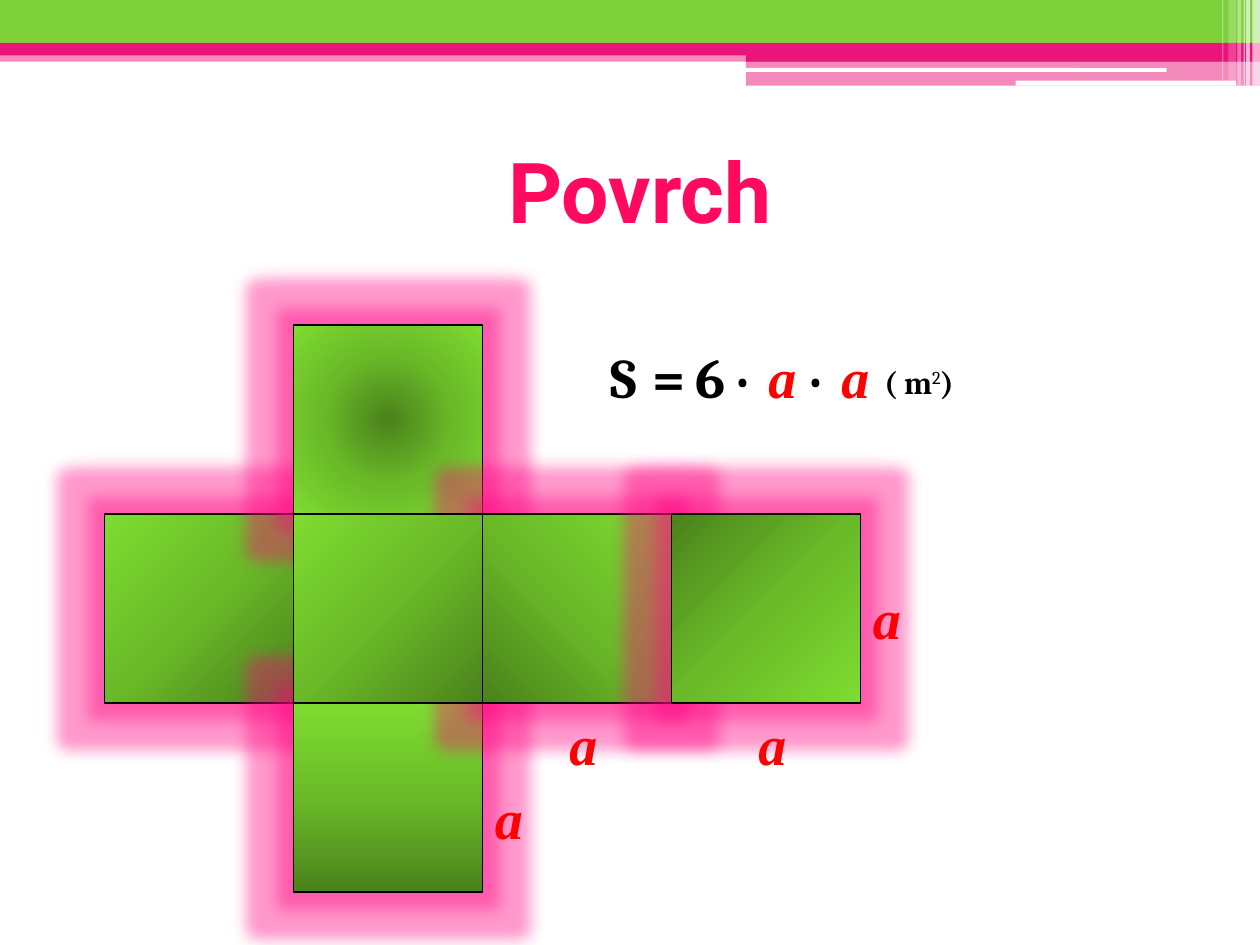
from typing import NamedTuple, Optional

from lxml import etree
from pptx import Presentation
from pptx.dml.color import RGBColor
from pptx.enum.shapes import MSO_SHAPE
from pptx.enum.text import MSO_ANCHOR, MSO_AUTO_SIZE, PP_ALIGN
from pptx.oxml import parse_xml
from pptx.oxml.ns import qn
from pptx.util import Inches, Pt

RECT = MSO_SHAPE.RECTANGLE
ROUND = MSO_SHAPE.ROUNDED_RECTANGLE
MIDDLE = MSO_ANCHOR.MIDDLE
CENTER = PP_ALIGN.CENTER
GROW = MSO_AUTO_SIZE.SHAPE_TO_FIT_TEXT
NS = 'xmlns:a="http://schemas.openxmlformats.org/drawingml/2006/main"'

GREEN, PINK, WHITE, BLACK, RED = "7FD13B", "EA157A", "FFFFFF", "000000", "FF0000"
GLOW, GLOW_RADIUS = "FF0080", Inches(0.25)
FACE_STOPS = [(0, "4B821C"), (50, "6ABA28"), (100, "7EDC30")]
TITLE_STOPS = [(0, "FF89AA"), (75, "FF0A5E"), (100, "BD0059")]
NET_LEFT, NET_TOP, SIDE = 0.83, 2.58, 1.5


class Bar(NamedTuple):
    x: float
    y: float
    w: float
    h: float
    color: str
    alpha: int = 100
    kind: int = RECT


class Face(NamedTuple):
    col: int
    row: int
    angle: Optional[int] = None
    focus: Optional[tuple] = None
    glow: bool = True


class Label(NamedTuple):
    x: float
    y: float
    w: float
    text: str


BARS = [
    Bar(0, 0.4, 10, 0.09, PINK, 50),
    Bar(0, 0, 10, 0.34, GREEN),
    Bar(0, 0.34, 10, 0.1, PINK),
    Bar(5.92, 0.39, 4.08, 0.1, PINK),
    Bar(5.92, 0.48, 4.08, 0.2, PINK, 50),
    Bar(5.91, 0.54, 3.35, 0.03, WHITE, kind=ROUND),
    Bar(8.06, 0.64, 1.75, 0.04, WHITE, kind=ROUND),
    Bar(9.94, 0, 0.06, 0.68, WHITE, 65),
    Bar(9.89, 0, 0.03, 0.68, WHITE, 65),
    Bar(9.87, 0, 0.01, 0.68, WHITE, 60),
    Bar(9.82, 0, 0.03, 0.68, WHITE, 40),
    Bar(9.75, 0, 0.06, 0.64, WHITE, 20),
    Bar(9.7, 0, 0.01, 0.64, WHITE, 30),
]

FACES = [
    Face(0, 1, angle=225),
    Face(1, 0, focus=(50, 50, 50, 50)),
    Face(1, 2, angle=270),
    Face(2, 1, focus=(0, 100, 100, 0)),
    Face(3, 1, focus=(0, 0, 100, 100)),
    Face(1, 1, angle=225, glow=False),
]

EDGE_LABELS = [
    Label(3.83, 6.17, 0.42, "a"),
    Label(4.42, 5.58, 0.42, "a"),
    Label(5.92, 5.58, 0.42, "a"),
    Label(6.83, 4.58, 0.42, "a"),
]

FORMULA = [
    Label(4.75, 2.67, 0.5, "S"),
    Label(5.08, 2.67, 0.46, "="),
    Label(5.42, 2.67, 0.45, "6"),
    Label(5.75, 2.58, 0.32, "."),
    Label(6, 2.67, 0.36, "a"),
    Label(6.33, 2.58, 0.32, "."),
    Label(6.58, 2.67, 0.36, "a"),
]

VARIABLE = {"size": Pt(32), "name": "Times New Roman", "bold": True, "italic": True}
SYMBOL = {"size": Pt(32), "name": "Cambria", "bold": True}
UNIT = {"size": Pt(18), "name": "Cambria", "bold": True}
TITLE = {"size": Pt(48), "name": "Roboto", "bold": True}


def rgb(color: str) -> RGBColor:
    return RGBColor.from_string(color)


def gradient(stops, angle=None, focus=None):
    gs = "".join(
        f'<a:gs pos="{pos * 1000}"><a:srgbClr val="{color}"/></a:gs>'
        for pos, color in stops
    )
    if focus:
        sides = " ".join(f'{k}="{v * 1000}"' for k, v in zip("ltrb", focus))
        direction = f'<a:path path="circle"><a:fillToRect {sides}/></a:path>'
    else:
        direction = f'<a:lin ang="{angle * 60000}" scaled="0"/>'
    return parse_xml(
        f'<a:gradFill {NS} rotWithShape="1"><a:gsLst>{gs}</a:gsLst>{direction}</a:gradFill>'
    )


def add_bar(s, bar: Bar) -> None:
    sp = s.shapes.add_shape(bar.kind, *map(Inches, bar[:4]))
    sp.shadow.inherit = False
    sp.line.fill.background()
    sp.fill.solid()
    sp.fill.fore_color.rgb = rgb(bar.color)
    if bar.alpha < 100:
        clr = sp.fill._xPr.find(qn("a:solidFill"))[0]
        etree.SubElement(clr, qn("a:alpha"), val=str(bar.alpha * 1000))


def add_face(s, face: Face) -> None:
    x, y = NET_LEFT + face.col * SIDE, NET_TOP + face.row * SIDE
    sp = s.shapes.add_shape(RECT, *map(Inches, (x, y, SIDE, SIDE)))
    sp.shadow.inherit = False
    sp.line.color.rgb = rgb(BLACK)
    sp.line.width = Pt(0.75)
    props = sp._element.spPr
    props.find(qn("a:prstGeom")).addnext(gradient(FACE_STOPS, face.angle, face.focus))
    if face.glow:
        props.find(qn("a:effectLst")).append(parse_xml(
            f'<a:glow {NS} rad="{GLOW_RADIUS}"><a:srgbClr val="{GLOW}">'
            f'<a:alpha val="40000"/></a:srgbClr></a:glow>'
        ))


def add_box(s, x: float, y: float, w: float, h: float):
    tf = s.shapes.add_textbox(*map(Inches, (x, y, w, h))).text_frame
    tf.word_wrap = False
    tf.auto_size = GROW
    return tf


def add_run(p, text: str, fmt: dict, color: str = BLACK):
    r = p.add_run()
    r.text = text
    for name, value in fmt.items():
        setattr(r.font, name, value)
    r.font.color.rgb = rgb(color)
    return r


def add_label(s, label: Label) -> None:
    p = add_box(s, label.x, label.y, label.w, 0.63).paragraphs[0]
    fmt, color = (VARIABLE, RED) if label.text == "a" else (SYMBOL, BLACK)
    add_run(p, label.text, fmt, color)


def add_title(s) -> None:
    tf = add_box(s, 0.58, 0.92, 9, 1.17)
    tf.auto_size = MSO_AUTO_SIZE.NONE
    tf.word_wrap = True
    tf.vertical_anchor = MIDDLE
    p = tf.paragraphs[0]
    p.alignment = CENTER
    props = add_run(p, "Povrch", TITLE).font._element
    props.replace(props.find(qn("a:solidFill")), gradient(TITLE_STOPS, 90))


def add_unit(s) -> None:
    p = add_box(s, 6.92, 2.83, 0.84, 0.4).paragraphs[0]
    add_run(p, "( m", UNIT)
    r = add_run(p, "2", {**UNIT, "bold": False})
    r.font._element.set("baseline", "30000")
    add_run(p, ")", UNIT)


def main() -> None:
    prs = Presentation()
    prs.slide_width, prs.slide_height = Inches(10), Inches(7.5)
    s = prs.slides.add_slide(prs.slide_layouts[6])
    for bar in BARS:
        add_bar(s, bar)
    add_title(s)
    for face in FACES:
        add_face(s, face)
    for label in EDGE_LABELS + FORMULA:
        add_label(s, label)
    add_unit(s)
    prs.save("out.pptx")


if __name__ == "__main__":
    main()
